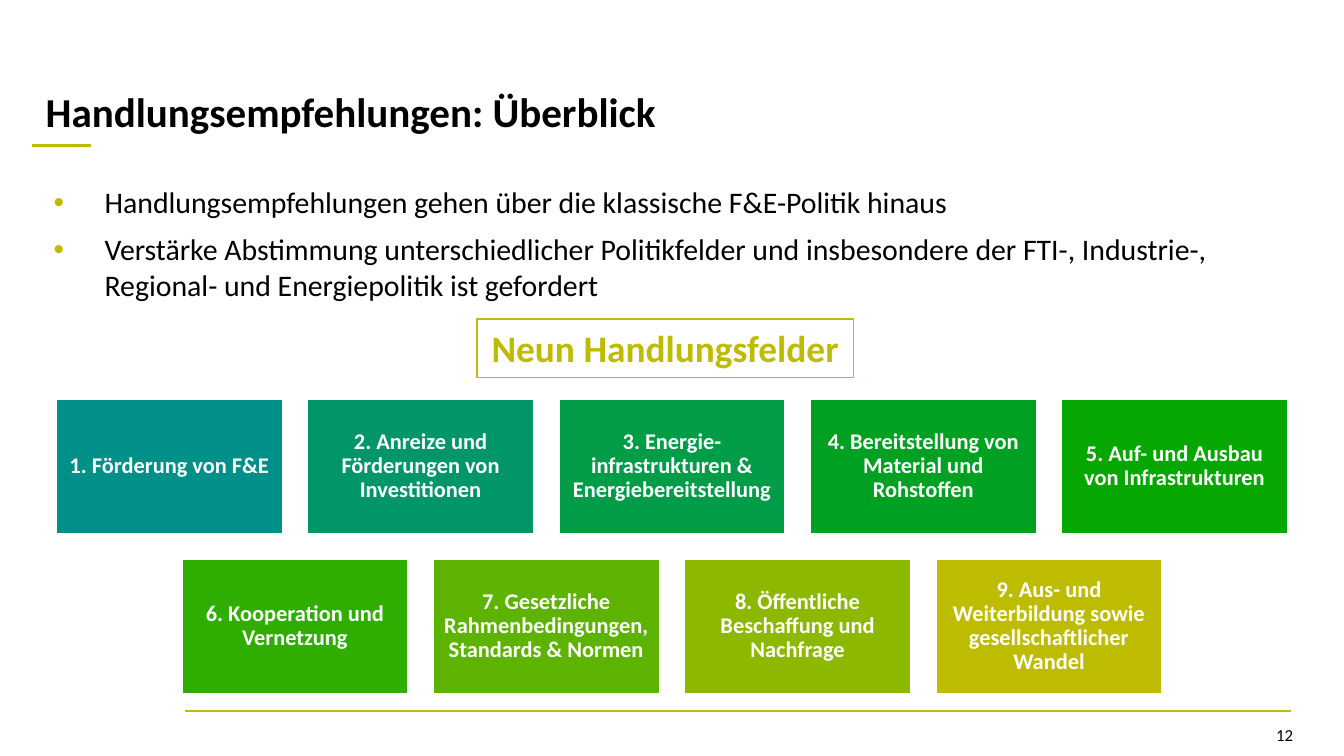
from dataclasses import dataclass

import pptx
import pptx.dml.color
import pptx.enum.shapes
import pptx.enum.text
import pptx.oxml
import pptx.oxml.ns
import pptx.util

Pt = pptx.util.Pt
ALIGN = pptx.enum.text.PP_ALIGN
ANCHOR = pptx.enum.text.MSO_ANCHOR
RECTANGLE = pptx.enum.shapes.MSO_SHAPE.RECTANGLE


@dataclass(frozen=True)
class Theme:
    font: str = "Calibri"
    text: str = "000000"
    white: str = "FFFFFF"
    accent: str = "BEBC00"
    title_size: int = 22
    label_size: int = 20
    body_size: int = 16
    tile_size: int = 12
    number_size: int = 9


THEME = Theme()
SLIDE_WIDTH, SLIDE_HEIGHT = 720, 405

BULLETS = [
    "Handlungsempfehlungen gehen über die klassische F&E-Politik hinaus",
    "Verstärke Abstimmung unterschiedlicher Politikfelder und insbesondere "
    "der FTI-, Industrie-, Regional- und Energiepolitik ist gefordert",
]

# Rows of action fields: text and fill colour
FIELD_ROWS = [
    [
        ("1. Förderung von F&E", "009089"),
        ("2. Anreize und Förderungen von Investitionen", "00966A"),
        ("3. Energie-infrastrukturen & Energiebereitstellung", "009C48"),
        ("4. Bereitstellung von Material und Rohstoffen", "00A123"),
        ("5. Auf- und Ausbau von Infrastrukturen", "05A700"),
    ],
    [
        ("6. Kooperation und Vernetzung", "2FAD00"),
        ("7. Gesetzliche Rahmenbedingungen, Standards & Normen", "5DB300"),
        ("8. Öffentliche Beschaffung und Nachfrage", "8DB800"),
        ("9. Aus- und Weiterbildung sowie gesellschaftlicher Wandel", THEME.accent),
    ],
]
TILE_WIDTH, TILE_HEIGHT, TILE_GAP = 122.4, 73.44, 12.24
TILES_TOP = 213.1


def rgb(value):
    return pptx.dml.color.RGBColor.from_string(value)


def apply(target, values):
    for name, value in values.items():
        setattr(target, name, value)


def place(shape, left, top, width, height):
    apply(shape, {"left": Pt(left), "top": Pt(top),
                  "width": Pt(width), "height": Pt(height)})


def format_frame(frame, anchor, inset_x=7.2, inset_y=3.6):
    apply(frame, {
        "word_wrap": True,
        "auto_size": pptx.enum.text.MSO_AUTO_SIZE.NONE,
        "vertical_anchor": anchor,
        "margin_left": Pt(inset_x), "margin_right": Pt(inset_x),
        "margin_top": Pt(inset_y), "margin_bottom": Pt(inset_y),
    })


def write(para, text, size, color=THEME.text, bold=False, **layout):
    span = para.add_run()
    span.text = text
    apply(span.font, {"name": THEME.font, "size": Pt(size), "bold": bold})
    span.font.color.rgb = rgb(color)
    apply(para, layout)


def add_bullet(para):
    """Give a paragraph a hanging accent-coloured bullet."""
    properties = para._p.get_or_add_pPr()
    properties.set("marL", str(Pt(27.36)))
    properties.set("indent", str(-Pt(27.36)))
    namespace = pptx.oxml.ns.nsdecls("a")
    for markup in (
        f'<a:buClr {namespace}><a:srgbClr val="{THEME.accent}"/></a:buClr>',
        f'<a:buFont {namespace} typeface="Arial"/>',
        f'<a:buChar {namespace} char="•"/>',
    ):
        properties.append(pptx.oxml.parse_xml(markup))


def add_title(slide, text):
    title = slide.shapes.title
    place(title, 17.28, 16.56, 614.9, 59.76)
    format_frame(title.text_frame, ANCHOR.BOTTOM)
    write(title.text_frame.paragraphs[0], text, THEME.title_size,
          bold=True, alignment=ALIGN.LEFT)


def add_rule(slide, left, right, y):
    rule = slide.shapes.add_connector(
        pptx.enum.shapes.MSO_CONNECTOR.STRAIGHT, Pt(left), Pt(y), Pt(right), Pt(y))
    rule.line.color.rgb = rgb(THEME.accent)
    rule.line.width = Pt(1.5)
    rule._element.spPr.append(pptx.oxml.parse_xml(
        f'<a:effectLst {pptx.oxml.ns.nsdecls("a")}/>'))


def add_text_box(slide, left, top, width, height, anchor):
    box = slide.shapes.add_textbox(Pt(left), Pt(top), Pt(width), Pt(height))
    format_frame(box.text_frame, anchor)
    return box.text_frame


def add_bullet_list(slide, items):
    frame = add_text_box(slide, 21.6, 95.04, 670.3, 125, ANCHOR.TOP)
    for index, item in enumerate(items):
        para = frame.add_paragraph() if index else frame.paragraphs[0]
        add_bullet(para)
        write(para, item, THEME.body_size, space_after=Pt(6))


def add_rectangle(slide, left, top, width, height, fill, line, line_width):
    box = slide.shapes.add_shape(
        RECTANGLE, Pt(left), Pt(top), Pt(width), Pt(height))
    box.shadow.inherit = False
    if fill:
        box.fill.solid()
        box.fill.fore_color.rgb = rgb(fill)
    else:
        box.fill.background()
    box.line.color.rgb = rgb(line)
    box.line.width = Pt(line_width)
    return box.text_frame


def add_label(slide, text):
    frame = add_rectangle(slide, 255.6, 170.9, 201.6, 31.5,
                          None, THEME.accent, 0.75)
    format_frame(frame, ANCHOR.TOP, inset_x=5.76)
    write(frame.paragraphs[0], text, THEME.label_size, THEME.accent, True,
          alignment=ALIGN.CENTER, space_after=Pt(6))


def add_tile(slide, left, top, text, fill):
    frame = add_rectangle(slide, left, top, TILE_WIDTH, TILE_HEIGHT,
                          fill, THEME.white, 2)
    format_frame(frame, ANCHOR.MIDDLE, inset_x=3.6)
    write(frame.paragraphs[0], text, THEME.tile_size, THEME.white, True,
          alignment=ALIGN.CENTER, line_spacing=0.9)


def add_tile_rows(slide, rows):
    """Set out each row of tiles centred on the slide."""
    for row_index, row in enumerate(rows):
        row_width = len(row) * (TILE_WIDTH + TILE_GAP) - TILE_GAP
        row_left = (SLIDE_WIDTH - row_width) / 2
        top = TILES_TOP + row_index * (TILE_HEIGHT + TILE_GAP)
        for column, (text, fill) in enumerate(row):
            left = row_left + column * (TILE_WIDTH + TILE_GAP)
            add_tile(slide, left, top, text, fill)


def add_page_number(slide, number):
    frame = add_text_box(slide, 532.1, 385.2, 167.8, 17.3, ANCHOR.BOTTOM)
    write(frame.paragraphs[0], number, THEME.number_size, alignment=ALIGN.RIGHT)


def main():
    deck = pptx.Presentation()
    deck.slide_width, deck.slide_height = Pt(SLIDE_WIDTH), Pt(SLIDE_HEIGHT)
    slide = deck.slides.add_slide(deck.slide_layouts.get_by_name("Title Only"))

    # Page furniture
    add_page_number(slide, "12")
    add_rule(slide, 17, 49, 77.9)
    add_rule(slide, 99, 691.5, 380.9)

    # Heading and key messages
    add_title(slide, "Handlungsempfehlungen: Überblick")
    add_bullet_list(slide, BULLETS)

    # Nine action fields
    add_tile_rows(slide, FIELD_ROWS)
    add_label(slide, "Neun Handlungsfelder")

    deck.save("out.pptx")


if __name__ == "__main__":
    main()
